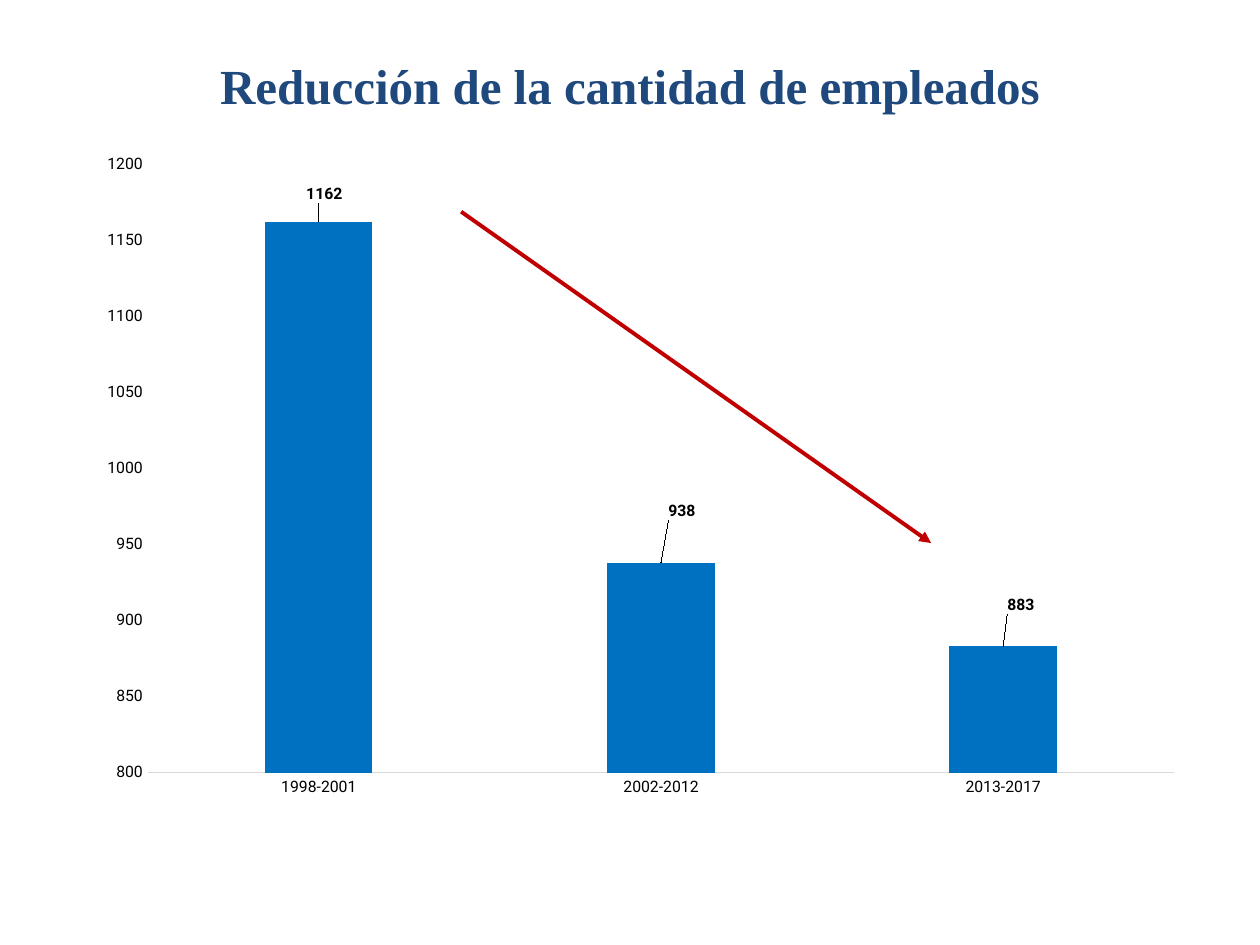
from dataclasses import dataclass

from lxml import etree
from pptx import Presentation
from pptx.chart.data import CategoryChartData
from pptx.dml.color import RGBColor
from pptx.enum import chart as ch, shapes, text
from pptx.oxml import parse_xml
from pptx.oxml.ns import nsdecls, qn
from pptx.util import Inches, Pt


@dataclass(frozen=True)
class Theme:
    navy: str = "1F497D"
    blue: str = "0070C0"
    red: str = "C00000"
    grey: str = "D9D9D9"
    black: str = "000000"
    serif: str = "Times New Roman"
    sans: str = "Roboto"
    head: int = 28
    base: int = 10
    small: int = 9


def place(**parts):
    """Make a manual chart layout from its named parts."""
    body = "".join(f'<c:{key} val="{val}"/>' for key, val in parts.items())
    return parse_xml(f'<c:layout {nsdecls("c")}><c:manualLayout>{body}'
                     '</c:manualLayout></c:layout>')


class Deck:
    def __init__(self, theme):
        self.theme = theme
        self.prs = Presentation()
        self.prs.slide_width, self.prs.slide_height = Inches(10), Inches(7.5)
        self.slide = self.prs.slides.add_slide(self.prs.slide_layouts[6])

    def style(self, font, name, size, color, bold=False):
        font.name, font.size, font.bold = name, Pt(size), bold
        font.color.rgb = RGBColor.from_string(color)

    def title(self, words, *box):
        frame = self.slide.shapes.add_textbox(*map(Inches, box)).text_frame
        frame.word_wrap = True
        frame.vertical_anchor = text.MSO_ANCHOR.MIDDLE
        frame.text = words
        para = frame.paragraphs[0]
        para.alignment = text.PP_ALIGN.CENTER
        t = self.theme
        self.style(para.runs[0].font, t.serif, t.head, t.navy, True)

    def columns(self, cats, vals, shifts, *box):
        """Add a column chart; shifts move each value label off its bar."""
        t = self.theme
        data = CategoryChartData(number_format="0")
        data.categories = cats
        data.add_series("Series 1", vals)
        chart = self.slide.shapes.add_chart(
            ch.XL_CHART_TYPE.COLUMN_CLUSTERED, *map(Inches, box), data).chart
        chart.has_legend = chart.has_title = False
        self.style(chart.font, t.sans, t.base, t.black)

        for axis in (chart.category_axis, chart.value_axis):
            axis.has_major_gridlines = False
            axis.major_tick_mark = axis.minor_tick_mark = ch.XL_TICK_MARK.NONE
            self.style(axis.tick_labels.font, t.sans, t.small, t.black)
        line = chart.category_axis.format.line
        line.color.rgb = RGBColor.from_string(t.grey)
        line.width = Pt(0.75)
        axis.format.line.fill.background()
        axis.minimum_scale, axis.maximum_scale, axis.major_unit = 800, 1200, 50
        axis.tick_labels.number_format = "0"
        axis.tick_labels.number_format_is_linked = False

        plot = chart.plots[0]
        plot.gap_width, plot.vary_by_categories = 219, False
        bars = plot.series[0]
        bars.format.fill.solid()
        bars.format.fill.fore_color.rgb = RGBColor.from_string(t.blue)
        labels = bars.data_labels
        labels.show_value = True
        labels.number_format, labels.number_format_is_linked = "0", False
        self.style(labels.font, t.sans, t.small, t.black, True)
        for i in range(len(shifts)):
            label = bars.points[i].data_label
            label.position = ch.XL_LABEL_POSITION.OUTSIDE_END
            self.style(label.font, t.sans, t.small, t.black, True)
        for node, (x, y) in zip(bars._element.xpath("c:dLbls/c:dLbl"), shifts):
            node.insert(1, place(x=x, y=y))

        area = chart._chartSpace.chart.plotArea
        for old in area.findall(qn("c:layout")):
            area.remove(old)
        area.insert(0, place(layoutTarget="inner", xMode="edge", yMode="edge",
                             x=0.054, y=0.028, w=0.93, h=0.9))

    def arrow(self, *ends):
        link = self.slide.shapes.add_connector(
            shapes.MSO_CONNECTOR.STRAIGHT, *map(Inches, ends))
        link.line.color.rgb = RGBColor.from_string(self.theme.red)
        link.line.width = Pt(2.25)
        tail = etree.SubElement(link.line._get_or_add_ln(), qn("a:tailEnd"))
        tail.set("type", "triangle")
        etree.SubElement(link._element.spPr, qn("a:effectLst"))


def main():
    deck = Deck(Theme())
    deck.title("Reducción de la cantidad de empleados", 0, 0.27, 10, 0.81)
    deck.columns(("1998-2001", "2002-2012", "2013-2017"), (1162, 938, 883),
                 ((0.005, -0.02), (0.019, -0.055), (0.016, -0.04)),
                 0.7, 1.15, 8.76, 5.37)
    deck.arrow(3.66, 1.68, 7.39, 4.31)
    deck.prs.save("out.pptx")


if __name__ == "__main__":
    main()
